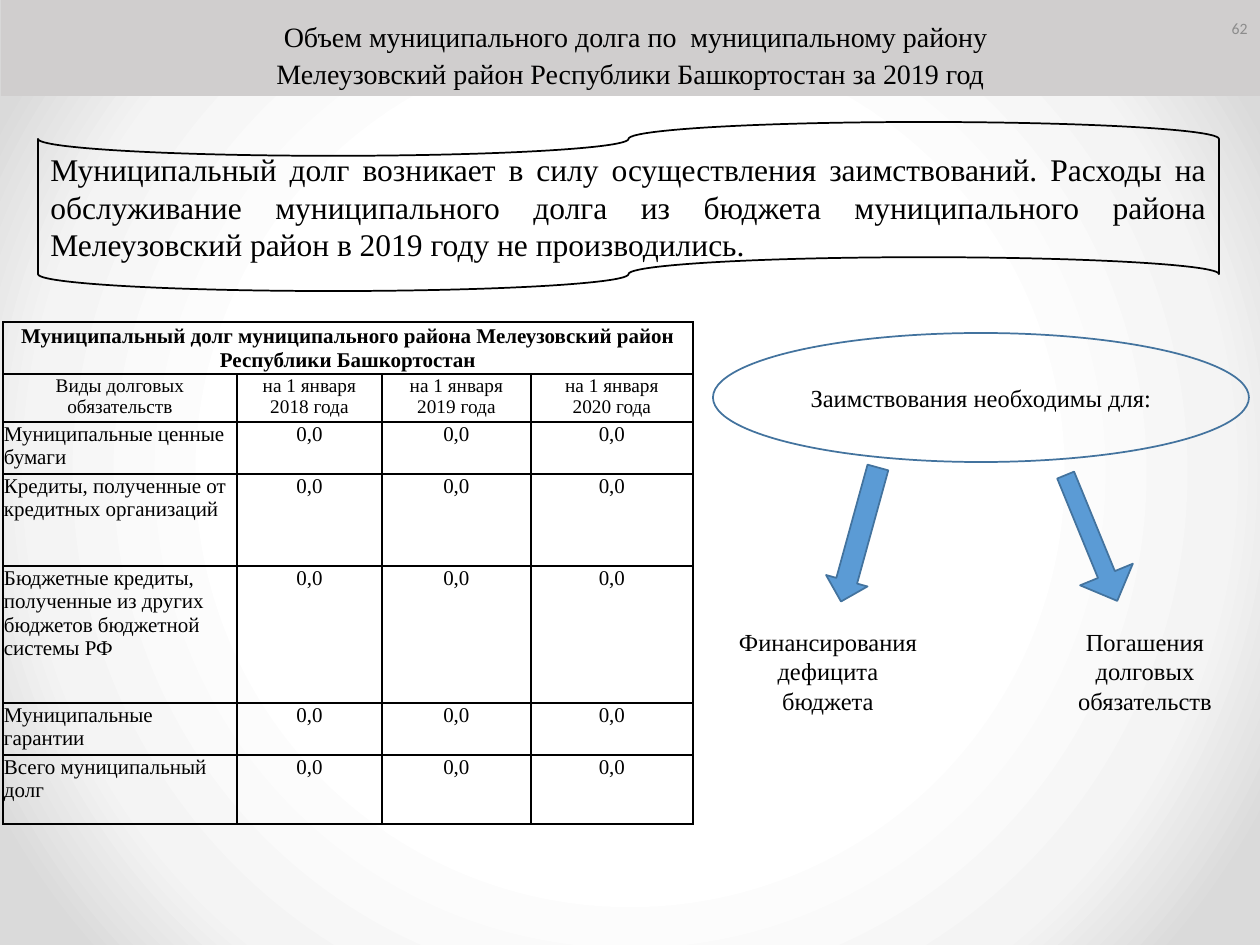
from dataclasses import dataclass

from lxml.etree import SubElement
from pptx import Presentation
from pptx.dml.color import RGBColor
from pptx.enum.shapes import MSO_SHAPE as Shape
from pptx.enum.text import MSO_ANCHOR as Anchor, PP_ALIGN as Align
from pptx.oxml import parse_xml
from pptx.oxml.ns import nsdecls, qn
from pptx.util import Emu, Pt

PX = 7257.6  # EMU in one px, at 126 px to the inch


@dataclass(frozen=True)
class Theme:
    font: str = "Times New Roman"
    plain: str = "Calibri"
    ink: str = "000000"
    band: str = "D0CECE"
    edge: str = "43739E"
    arrow: str = "5B9BD5"
    grey: str = "8C8C8C"
    lead: int = 24
    body: int = 18
    title: int = 16
    label: int = 14
    cell: int = 12
    head: int = 11
    page: int = 9


T = Theme()

# Content
TITLE = ("Объем муниципального долга по  муниципальному району\n"
         "Мелеузовский район Республики Башкортостан за 2019 год")
NOTE = ("Муниципальный долг возникает в силу осуществления заимствований. "
        "Расходы на обслуживание муниципального долга из бюджета "
        "муниципального района Мелеузовский район в 2019 году не производились.")
NEEDS = "Заимствования необходимы для:"
GOALS = [
    ("Финансирования дефицита бюджета", (719, 621, 218, 100)),
    ("Погашения долговых обязательств", (1041, 621, 208, 100)),
]
ARROWS = [((838, 465, 43, 139), 15.4, 0.5), ((1063, 470, 57, 136), 337.7, 0.32)]
CAPTION = ("Муниципальный долг муниципального района Мелеузовский район "
           "Республики Башкортостан")
HEADS = ["Виды долговых обязательств"] + [
    f"на 1 января\n{year} года" for year in (2018, 2019, 2020)]
KINDS = [
    "Муниципальные ценные бумаги",
    "Кредиты, полученные от кредитных организаций",
    "Бюджетные кредиты, полученные из других бюджетов бюджетной системы РФ",
    "Муниципальные гарантии",
    "Всего муниципальный долг",
]
ROWS = [[CAPTION, "", "", ""], HEADS] + [[kind] + ["0,0"] * 3 for kind in KINDS]
WIDTHS = [234, 145, 149, 162]
HEIGHTS = [52, 48, 52, 92, 137, 52, 69]
STOPS = [(50, "FFFFFF"), (76, "F4F4F4"), (92, "DADADA")]


def px(num):
    return Emu(round(num * PX))


def rgb(code):
    return RGBColor.from_string(code)


def write(frame, text, size, align=Align.CENTER, bold=False, font=T.font, color=T.ink):
    frame.text = text
    frame.word_wrap = True
    for para in frame.paragraphs:
        para.alignment = align
        for run in para.runs:
            run.font.size = Pt(size)
            run.font.name = font
            run.font.bold = bold
            run.font.color.rgb = rgb(color)


def draw(slide, kind, box, fill=None, line=None):
    shape = slide.shapes.add_shape(kind, *map(px, box))
    shape.shadow.inherit = False
    if fill:
        shape.fill.solid()
        shape.fill.fore_color.rgb = rgb(fill)
    else:
        shape.fill.background()
    if line:
        shape.line.color.rgb = rgb(line)
        shape.line.width = Pt(1)
    else:
        shape.line.fill.background()
    shape.text_frame.vertical_anchor = Anchor.MIDDLE
    return shape


def label(slide, box, *args, **style):
    frame = slide.shapes.add_textbox(*map(px, box)).text_frame
    frame.vertical_anchor = Anchor.MIDDLE
    write(frame, *args, **style)
    return frame


def shade(run):
    """Give the letters a soft shadow."""
    fill = run.font._element.find(qn("a:solidFill"))
    fill.addnext(parse_xml(
        f'<a:effectLst {nsdecls("a")}><a:outerShdw blurRad="38100" dist="25400" '
        'dir="5400000"><a:srgbClr val="000000"><a:alpha val="50000"/></a:srgbClr>'
        '</a:outerShdw></a:effectLst>'))


def frame_cell(cell):
    props = cell._tc.get_or_add_tcPr()
    for side in ("lnL", "lnR", "lnT", "lnB"):
        line = SubElement(props, qn(f"a:{side}"), w=str(Pt(1)))
        fill = SubElement(line, qn("a:solidFill"))
        SubElement(fill, qn("a:srgbClr"), val=T.ink)
    cell.fill.background()


def backdrop(slide):
    stops = "".join(f'<a:gs pos="{pos * 1000}"><a:srgbClr val="{code}"/></a:gs>'
                    for pos, code in STOPS)
    slide.element.cSld.insert(0, parse_xml(
        f'<p:bg {nsdecls("p", "a")}><p:bgPr><a:gradFill rotWithShape="1">'
        f'<a:gsLst>{stops}</a:gsLst><a:path path="circle">'
        '<a:fillToRect l="50000" t="50000" r="50000" b="50000"/></a:path>'
        '</a:gradFill><a:effectLst/></p:bgPr></p:bg>'))


def debt_table(slide):
    box = (3, 322, sum(WIDTHS), sum(HEIGHTS))
    table = slide.shapes.add_table(len(ROWS), len(WIDTHS), *map(px, box)).table
    table.first_row = table.horz_banding = False
    for col, width in zip(table.columns, WIDTHS):
        col.width = px(width)
    for row, height in zip(table.rows, HEIGHTS):
        row.height = px(height)
    for i, texts in enumerate(ROWS):
        for j, text in enumerate(texts):
            cell = table.cell(i, j)
            cell.margin_left = cell.margin_right = cell.margin_top = px(1)
            cell.margin_bottom = 0
            cell.vertical_anchor = Anchor.TOP if i else Anchor.MIDDLE
            write(cell.text_frame, text, T.head if i == 1 else T.cell,
                  Align.LEFT if i > 1 and j == 0 else Align.CENTER, bold=i == 0)
            frame_cell(cell)
    table.cell(0, 0).merge(table.cell(0, len(WIDTHS) - 1))


def main():
    deck = Presentation()
    deck.slide_width, deck.slide_height = px(1260), px(945)
    slide = deck.slides.add_slide(deck.slide_layouts[6])
    backdrop(slide)

    # Title band: a larger leading space sets the height of the first line
    band = draw(slide, Shape.RECTANGLE, (1, 0, 1259, 96), T.band).text_frame
    write(band, " \n" + TITLE.split("\n")[1], T.title)
    band.vertical_anchor = Anchor.BOTTOM
    first = band.paragraphs[0]
    first.runs[0].font.size = Pt(T.lead)
    run = first.add_run()
    run.text = TITLE.split("\n")[0]
    run.font.size = Pt(T.title)
    run.font.name = T.font
    run.font.color.rgb = rgb(T.ink)

    # Note and reasons for borrowing
    tape = draw(slide, Shape.FLOWCHART_PUNCHED_TAPE, (38, 122, 1181, 169), line=T.ink)
    write(tape.text_frame, NOTE, T.body, Align.JUSTIFY)
    oval = draw(slide, Shape.OVAL, (713, 333, 536, 129), line=T.edge)
    write(oval.text_frame, NEEDS, T.label)
    for text, box in GOALS:
        shade(label(slide, box, text, T.label).paragraphs[0].runs[0])
    for box, turn, stem in ARROWS:
        arrow = draw(slide, Shape.DOWN_ARROW, box, T.arrow, T.edge)
        arrow.rotation = turn
        arrow.adjustments[0] = stem

    debt_table(slide)

    # Page number
    label(slide, (966, 3, 294, 50), "62", T.page, align=Align.RIGHT,
          font=T.plain, color=T.grey)
    deck.save("out.pptx")


if __name__ == "__main__":
    main()
